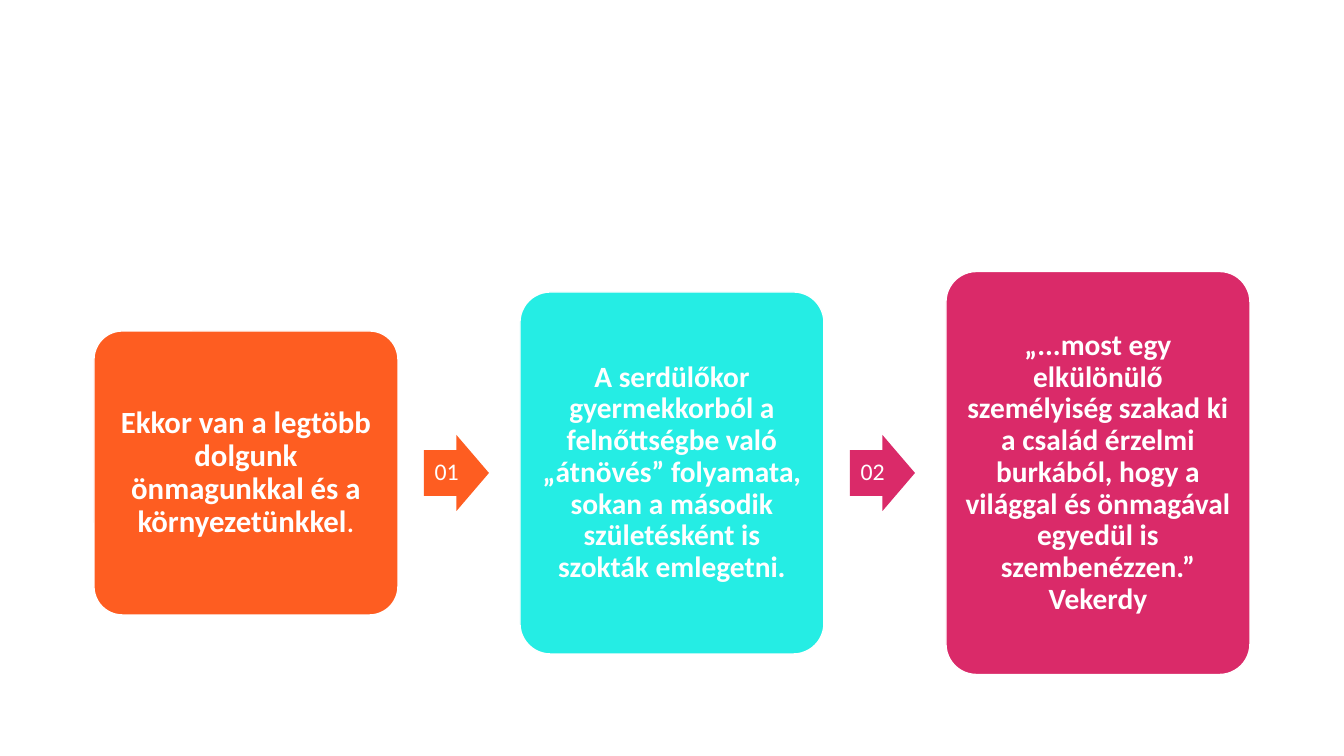
"""Build a slide with three growing cards joined by numbered arrows."""
from pptx import Presentation
from pptx.dml.color import RGBColor
from pptx.enum.shapes import MSO_SHAPE as SHAPE
from pptx.enum.text import MSO_ANCHOR as ANCHOR, PP_ALIGN as ALIGN
from pptx.util import Pt

ORANGE = RGBColor(0xFE, 0x5D, 0x21)
CYAN = RGBColor(0x25, 0xED, 0xE4)
PINK = RGBColor(0xDA, 0x2A, 0x69)
WHITE = RGBColor(0xFF, 0xFF, 0xFF)

CARDS = [
    (ORANGE, 284, 22, [
        ("Ekkor van a legtöbb dolgunk önmagunkkal és a környezetünkkel", True),
        (".", False),
    ]),
    (CYAN, 362, 21, [
        ("A serdülőkor gyermekkorból a felnőttségbe való „átnövés” folyamata, "
         "sokan a második születésként is szokták emlegetni.", True),
    ]),
    (PINK, 403, 21, [
        ("„...most egy elkülönülő személyiség szakad ki a család érzelmi burkából, "
         "hogy a világgal és önmagával egyedül is szembenézzen.” Vekerdy", True),
    ]),
]
ARROWS = [(ORANGE, "01"), (PINK, "02")]

SLIDE_W, SLIDE_H = 1344, 756
LEFT, PITCH, MIDDLE = 94, 426, 473
CARD_W, CARD_INSET = 304, 9
ARROW_OFFSET, ARROW_W, ARROW_H = 330, 65, 76


def px(n):
    return round(n * 914400 / 100.8)


def add_block(s, kind, adjust, x, w, h, fill, inset, size, runs):
    sp = s.shapes.add_shape(kind, px(x), px(MIDDLE - h / 2), px(w), px(h))
    sp.shadow.inherit = False
    for i, value in enumerate(adjust):
        sp.adjustments[i] = value
    sp.fill.solid()
    sp.fill.fore_color.rgb = fill
    sp.line.fill.background()
    tf = sp.text_frame
    tf.word_wrap = True
    tf.vertical_anchor = ANCHOR.MIDDLE
    tf.margin_left = tf.margin_right = tf.margin_top = tf.margin_bottom = px(inset)
    p = tf.paragraphs[0]
    p.alignment = ALIGN.CENTER
    p.line_spacing = 0.9
    p.space_after = Pt(round(size * 0.35))
    for text, bold in runs:
        r = p.add_run()
        r.text = text
        r.font.name = "Calibri"
        r.font.size = Pt(size)
        r.font.bold = bold
        r.font.color.rgb = WHITE
    return sp


def main():
    prs = Presentation()
    prs.slide_width, prs.slide_height = px(SLIDE_W), px(SLIDE_H)
    s = prs.slides.add_slide(prs.slide_layouts[6])
    for i, (fill, h, size, runs) in enumerate(CARDS):
        card = add_block(s, SHAPE.ROUNDED_RECTANGLE, [0.1], LEFT + i * PITCH,
                         CARD_W, h, fill, CARD_INSET, size, runs)
        card.line.color.rgb = WHITE
        card.line.width = Pt(1)
    for i, (fill, number) in enumerate(ARROWS):
        add_block(s, SHAPE.RIGHT_ARROW, [0.6, 0.5], LEFT + i * PITCH + ARROW_OFFSET,
                  ARROW_W, ARROW_H, fill, 0, 17, [(number, False)])
    prs.save("out.pptx")


if __name__ == "__main__":
    main()
